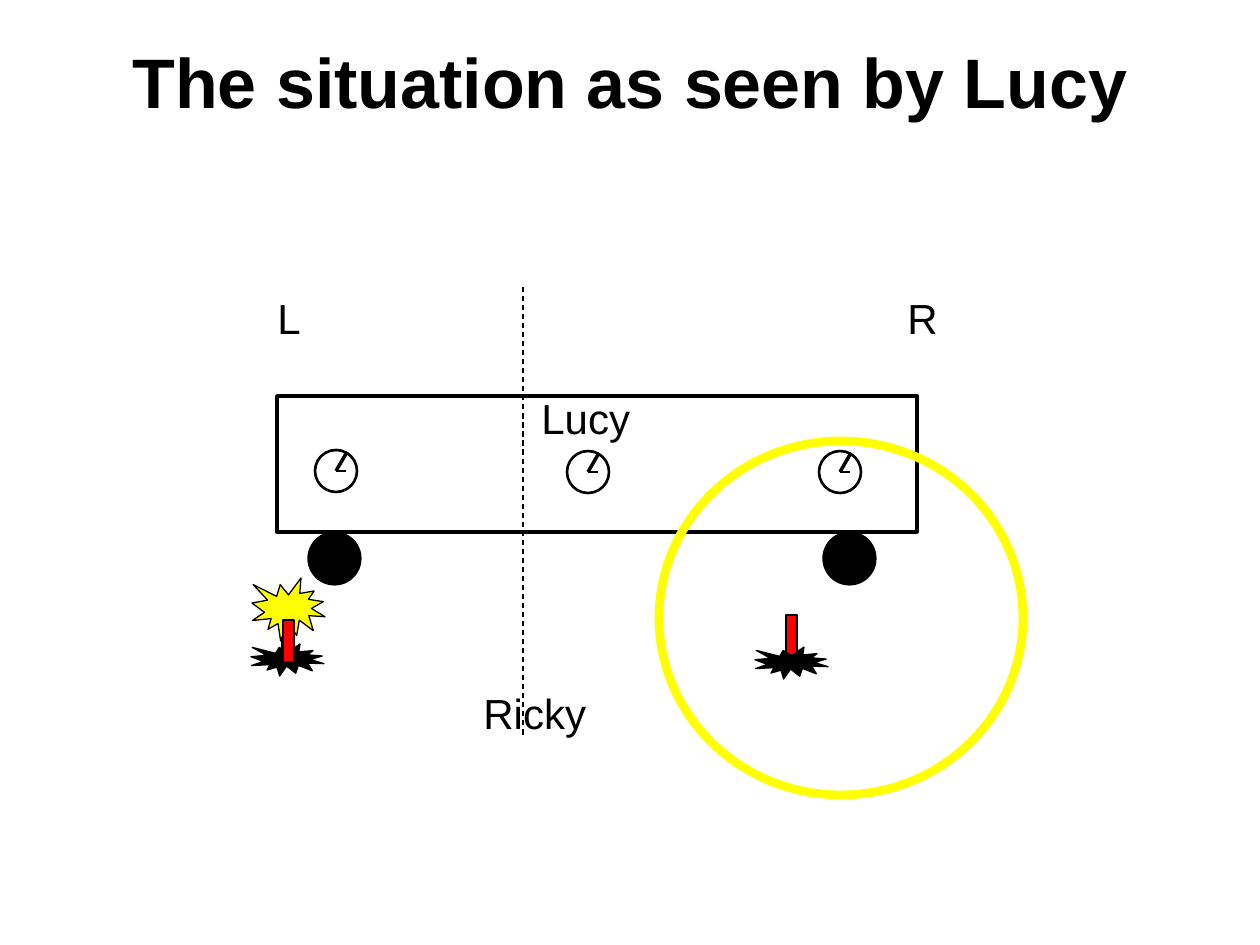
from typing import NamedTuple, Optional

from pptx import Presentation
from pptx.dml.color import RGBColor
from pptx.enum.dml import MSO_LINE_DASH_STYLE as Dash
from pptx.enum.shapes import MSO_CONNECTOR as Conn, MSO_SHAPE as Kind
from pptx.enum.text import MSO_AUTO_SIZE as Fit, PP_ALIGN as Align
from pptx.oxml.ns import qn
from pptx.util import Emu, Pt
from lxml.etree import SubElement

SCALE = 914400 / 126  # EMU in one px
BLACK, WHITE, RED, YELLOW = "000000", "FFFFFF", "FF0000", "FFFF00"


class Box(NamedTuple):
    x: int
    y: int
    w: int
    h: int


class Label(NamedTuple):
    text: str
    box: Box
    size: int = 24
    bold: bool = False
    wrap: bool = False


def px(n: int) -> Emu:
    return Emu(round(n * SCALE))


def color(code: str) -> RGBColor:
    return RGBColor.from_string(code)


deck = Presentation()
deck.slide_width, deck.slide_height = px(1260), px(945)
slide = deck.slides.add_slide(deck.slide_layouts[6])
parts = slide.shapes


def shape(kind: Kind, box: Box, fill: Optional[str],
          line: str = BLACK, width: float = 0.75) -> None:
    item = parts.add_shape(kind, *map(px, box))
    item.shadow.inherit = False
    if fill:
        item.fill.solid()
        item.fill.fore_color.rgb = color(fill)
    else:
        item.fill.background()
    item.line.color.rgb = color(line)
    item.line.width = Pt(width)


def line(x1: int, y1: int, x2: int, y2: int, width: float,
         dash: Optional[Dash] = None) -> None:
    item = parts.add_connector(Conn.STRAIGHT, px(x1), px(y1), px(x2), px(y2))
    item.line.color.rgb = color(BLACK)
    item.line.width = Pt(width)
    if dash:
        item.line.dash_style = dash
    SubElement(item._element.spPr, qn("a:effectLst"))


def write(label: Label) -> None:
    frame = parts.add_textbox(*map(px, label.box)).text_frame
    frame.word_wrap = label.wrap
    frame.auto_size = Fit.SHAPE_TO_FIT_TEXT
    frame.text = label.text
    para = frame.paragraphs[0]
    para.alignment = Align.CENTER if label.wrap else Align.LEFT
    font = para.runs[0].font
    font.name, font.size, font.bold = "Arial", Pt(label.size), label.bold
    font.color.rgb = color(BLACK)


def clock(x: int, y: int) -> None:
    shape(Kind.OVAL, Box(x, y, 42, 42), WHITE, width=1.5)
    line(x + 21, y + 21, x + 32, y + 2, 2)
    line(x + 21, y + 21, x + 31, y + 21, 1.5)


def stick(x: int, y: int) -> None:
    """Firecracker standing behind its burn mark."""
    shape(Kind.RECTANGLE, Box(x + 31, y, 11, 53), RED)
    shape(Kind.EXPLOSION1, Box(x, y + 32, 73, 32), BLACK)


# Clocks on the train
for x, y in ((819, 451), (567, 451), (315, 450)):
    clock(x, y)

# End marks and Ricky's position
for label in (Label("R", Box(895, 286, 55, 63)),
              Label("L", Box(265, 286, 49, 63))):
    write(label)
line(523, 287, 523, 737, 0.75, Dash.DASH)

# Train: wheels and car
for x in (308, 823):
    shape(Kind.OVAL, Box(x, 532, 53, 53), BLACK)
shape(Kind.RECTANGLE, Box(277, 396, 640, 136), None, width=2)

# Names and title
for label in (Label("Lucy", Box(529, 386, 115, 63)),
              Label("Ricky", Box(471, 681, 129, 63)),
              Label("The situation as seen by Lucy", Box(0, 32, 1260, 97),
                    40, True, True)):
    write(label)

# Left firecracker, just going off
stick(251, 612)
shape(Kind.EXPLOSION1, Box(252, 578, 73, 63), YELLOW)
shape(Kind.RECTANGLE, Box(283, 620, 11, 42), RED)

# Right firecracker with its spreading flash of light
shape(Kind.OVAL, Box(659, 441, 364, 354), None, YELLOW, 5)
stick(755, 615)

deck.save("out.pptx")
